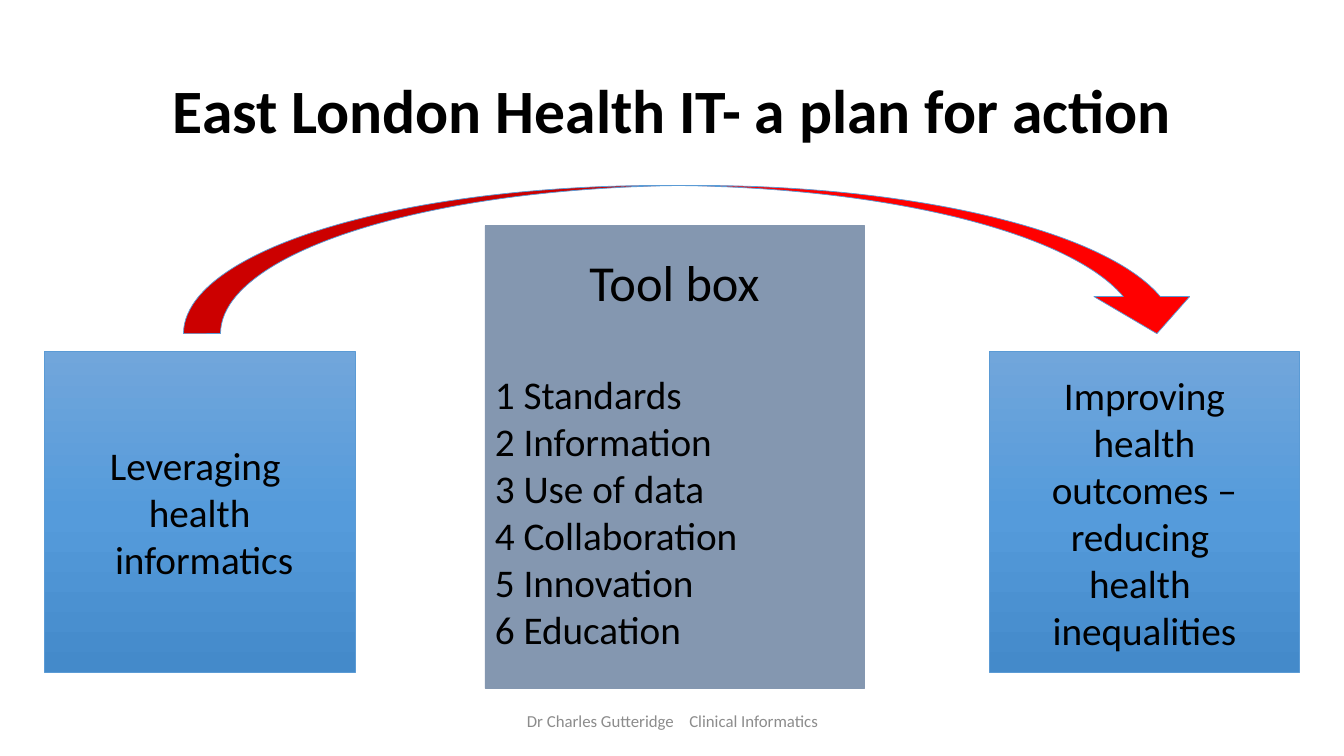
from copy import deepcopy
from dataclasses import dataclass

from pptx import Presentation
from pptx.dml.color import RGBColor
from pptx.enum.shapes import MSO_SHAPE
from pptx.enum.text import MSO_ANCHOR, PP_ALIGN
from pptx.oxml.ns import qn
from pptx.shapes.autoshape import Shape
from pptx.slide import Slide
from pptx.text.text import TextFrame
from pptx.util import Inches, Pt


@dataclass(frozen=True)
class Theme:
    font: str = "Calibri"
    ink: str = "000000"
    footer_ink: str = "8C8C8C"
    panel_line: str = "5B9BD5"
    panel_stops: tuple[str, ...] = ("71A6DB", "559BDB", "448ACA")
    arrow: str = "FF0000"
    toolbox: str = "8497B0"
    title_size: int = 44
    heading_size: int = 36
    body_size: int = 28
    footer_size: int = 12
    line_width: float = 0.5


@dataclass(frozen=True)
class Box:
    left: float
    top: float
    width: float
    height: float

    def lengths(self) -> tuple[int, ...]:
        return tuple(Inches(v) for v in (self.left, self.top, self.width, self.height))


@dataclass(frozen=True)
class Panel:
    box: Box
    lines: tuple[str, ...]


THEME = Theme()
TITLE_BOX = Box(0.92, 0.4, 11.5, 1.45)
FOOTER_BOX = Box(4.42, 6.95, 4.5, 0.4)
ARROW_BOX = Box(1.82, 1.84, 10.13, 1.47)
TOOLBOX_BOX = Box(4.81, 2.24, 3.76, 4.59)
PANELS = (
    Panel(Box(0.44, 3.49, 3.08, 3.18), ("Leveraging ", "health", " informatics")),
    Panel(
        Box(9.81, 3.49, 3.08, 3.18),
        ("Improving", "health", "outcomes –", "reducing ", "health ", "inequalities"),
    ),
)
TOOLS = ("Standards", "Information", "Use of data", "Collaboration", "Innovation", "Education")


def write_lines(
    frame: TextFrame,
    lines: tuple[str, ...],
    size: int,
    color: str = THEME.ink,
    align: PP_ALIGN = PP_ALIGN.CENTER,
    bold: bool = False,
) -> None:
    """Add one paragraph per line, using the empty first paragraph if there is one."""
    frame.word_wrap = True
    frame.vertical_anchor = MSO_ANCHOR.MIDDLE
    for line in lines:
        first = frame.paragraphs[0]
        paragraph = frame.add_paragraph() if first.runs else first
        paragraph.alignment = align
        run = paragraph.add_run()
        run.text = line
        for name, value in {"name": THEME.font, "size": Pt(size), "bold": bold}.items():
            setattr(run.font, name, value)
        run.font.color.rgb = RGBColor.from_string(color)


def add_block(slide: Slide, kind: MSO_SHAPE, box: Box, fill: str, line: str) -> Shape:
    block = slide.shapes.add_shape(kind, *box.lengths())
    block.shadow.inherit = False
    block.fill.solid()
    block.fill.fore_color.rgb = RGBColor.from_string(fill)
    block.line.color.rgb = RGBColor.from_string(line)
    block.line.width = Pt(THEME.line_width)
    return block


def apply_gradient(block: Shape, colors: tuple[str, ...]) -> None:
    """Shade the block from top to bottom with evenly spaced colours."""
    block.fill.gradient()
    block.fill.gradient_angle = 270
    stop_list = block.element.spPr.find(".//" + qn("a:gsLst"))
    while len(stop_list) < len(colors):
        stop_list.append(deepcopy(stop_list[0]))
    for index, (stop, color) in enumerate(zip(block.fill.gradient_stops, colors)):
        stop.position = index / (len(colors) - 1)
        stop.color.rgb = RGBColor.from_string(color)


def add_panel(slide: Slide, panel: Panel) -> None:
    block = add_block(
        slide, MSO_SHAPE.RECTANGLE, panel.box, THEME.panel_stops[0], THEME.panel_line
    )
    apply_gradient(block, THEME.panel_stops)
    write_lines(block.text_frame, panel.lines, THEME.body_size)


def add_title(slide: Slide) -> None:
    frame = slide.shapes.add_textbox(*TITLE_BOX.lengths()).text_frame
    title = ("East London Health IT- a plan for action",)
    write_lines(frame, title, THEME.title_size, bold=True)
    frame.paragraphs[0].line_spacing = 0.9


def add_footer(slide: Slide) -> None:
    """Write author and field, parted by one widened space."""
    frame = slide.shapes.add_textbox(*FOOTER_BOX.lengths()).text_frame
    write_lines(frame, ("Dr Charles Gutteridge",), THEME.footer_size, THEME.footer_ink)
    paragraph = frame.paragraphs[0]
    author = paragraph.runs[0]
    for text, spacing in ((" ", "810"), ("Clinical Informatics", "0")):
        run = deepcopy(author._r)
        run.text = text
        run.rPr.set("spc", spacing)
        paragraph._p.append(run)


def add_arrow(slide: Slide) -> None:
    arrow = add_block(
        slide, MSO_SHAPE.CURVED_DOWN_ARROW, ARROW_BOX, THEME.arrow, THEME.panel_line
    )
    for index, value in enumerate((0.25, 0.646, 0.25)):
        arrow.adjustments[index] = value


def add_toolbox(slide: Slide) -> None:
    toolbox = add_block(
        slide, MSO_SHAPE.RECTANGLE, TOOLBOX_BOX, THEME.toolbox, THEME.toolbox
    )
    frame = toolbox.text_frame
    write_lines(frame, ("Tool box",), THEME.heading_size)
    tools = tuple(f"{number} {tool}" for number, tool in enumerate(TOOLS, start=1))
    write_lines(frame, tools, THEME.body_size, align=PP_ALIGN.LEFT)
    frame.vertical_anchor = MSO_ANCHOR.TOP
    frame.margin_top = Inches(0.25)
    frame.paragraphs[0].space_after = Pt(42)


def main() -> None:
    deck = Presentation()
    deck.slide_width, deck.slide_height = Inches(13.33), Inches(7.5)
    slide = deck.slides.add_slide(deck.slide_layouts[6])
    add_title(slide)
    add_footer(slide)
    for panel in PANELS:
        add_panel(slide, panel)
    add_arrow(slide)
    add_toolbox(slide)
    deck.save("out.pptx")


if __name__ == "__main__":
    main()
